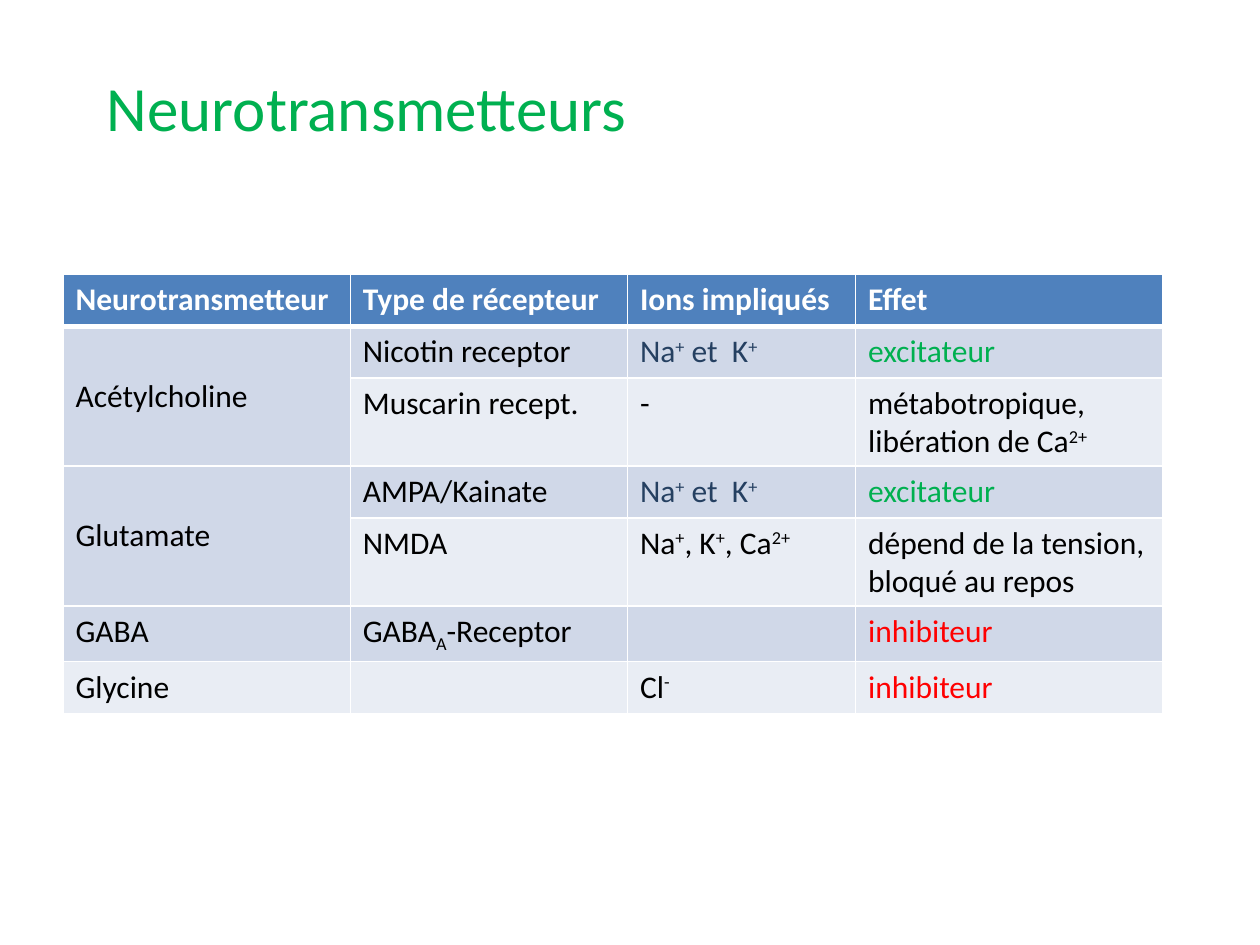
"""Build a slide with a table of neurotransmitters, receptors, ions and effects."""
from lxml import etree
from pptx import Presentation
from pptx.dml.color import RGBColor
from pptx.enum.text import MSO_ANCHOR
from pptx.oxml.ns import qn
from pptx.util import Inches, Pt

MIDDLE = MSO_ANCHOR.MIDDLE
WHITE = RGBColor(0xFF, 0xFF, 0xFF)
BLACK = RGBColor(0, 0, 0)
GREEN = RGBColor(0x00, 0xB0, 0x50)
RED = RGBColor(0xFF, 0, 0)
NAVY = RGBColor(0x25, 0x40, 0x61)
HEADER = RGBColor(0x4F, 0x81, 0xBD)
BANDS = (RGBColor(0xE9, 0xED, 0xF4), RGBColor(0xD0, 0xD8, 0xE8))
FONT = "Calibri"

TITLE = "Neurotransmetteurs"
SODIUM_POTASSIUM = "Na|^+| et  K|^+"
ROWS = [
    ("Neurotransmetteur", "Type de récepteur", "Ions impliqués", "Effet"),
    ("Acétylcholine", "Nicotin receptor", SODIUM_POTASSIUM, "excitateur"),
    ("", "Muscarin recept.", "-", "métabotropique, libération de Ca|^2+"),
    ("Glutamate", "AMPA/Kainate", SODIUM_POTASSIUM, "excitateur"),
    ("", "NMDA", "Na|^+|, K|^+|, Ca|^2+", "dépend de la tension, bloqué au repos"),
    ("GABA", "GABA|_A|-Receptor", "", "inhibiteur"),
    ("Glycine", "", "Cl|^-", "inhibiteur"),
]
MERGED_ROWS = [(1, 2), (3, 4)]
TEXT_COLORS = {"excitateur": GREEN, "inhibiteur": RED, SODIUM_POTASSIUM: NAVY}
BASELINES = {"^": "30000", "_": "-25000"}
COL_WIDTHS = (2.28, 2.2, 1.81, 2.44)
ROW_HEIGHTS = (0.41, 0.41, 0.41, 0.41, 0.41, 0.35, 0.41)


def style(p, size, color, bold=False):
    p.font.name, p.font.size = FONT, Pt(size)
    p.font.color.rgb, p.font.bold = color, bold


def add_runs(p, text):
    for part in text.split("|"):
        baseline = BASELINES.get(part[:1])
        r = p.add_run()
        r.text = part[1:] if baseline else part
        if baseline:
            r.font._element.set("baseline", baseline)


def set_borders(cell, widths):
    tc_pr = cell._tc.get_or_add_tcPr()
    for side, width in zip("LRTB", widths):
        ln = etree.SubElement(tc_pr, qn(f"a:ln{side}"), w=str(Pt(width)))
        fill = etree.SubElement(ln, qn("a:solidFill"))
        etree.SubElement(fill, qn("a:srgbClr"), val=str(WHITE))


def add_title(s):
    tf = s.shapes.add_textbox(Inches(0.75), Inches(0.22), Inches(9), Inches(1.25)).text_frame
    tf.word_wrap, tf.vertical_anchor = True, MIDDLE
    p = tf.paragraphs[0]
    p.text = TITLE
    style(p, 36, GREEN)


def add_receptor_table(s):
    table = s.shapes.add_table(
        len(ROWS), len(COL_WIDTHS), Inches(0.5), Inches(2.18),
        Inches(sum(COL_WIDTHS)), Inches(sum(ROW_HEIGHTS))).table
    for col, width in zip(table.columns, COL_WIDTHS):
        col.width = Inches(width)
    for row, height in zip(table.rows, ROW_HEIGHTS):
        row.height = Inches(height)

    for i, texts in enumerate(ROWS):
        is_header = i == 0
        for j, text in enumerate(texts):
            cell = table.cell(i, j)
            set_borders(cell, (1, 1, 3 if i == 1 else 1, 3 if is_header else 1))
            cell.fill.solid()
            cell.fill.fore_color.rgb = HEADER if is_header else BANDS[i % 2]
            p = cell.text_frame.paragraphs[0]
            style(p, 18, WHITE if is_header else TEXT_COLORS.get(text, BLACK), is_header)
            if text:
                add_runs(p, text)

    for first, last in MERGED_ROWS:
        cell = table.cell(first, 0)
        cell.merge(table.cell(last, 0))
        cell.vertical_anchor = MIDDLE


def main():
    prs = Presentation()
    prs.slide_width, prs.slide_height = Inches(10), Inches(7.5)
    s = prs.slides.add_slide(prs.slide_layouts[6])
    add_title(s)
    add_receptor_table(s)
    prs.save("out.pptx")


if __name__ == "__main__":
    main()
